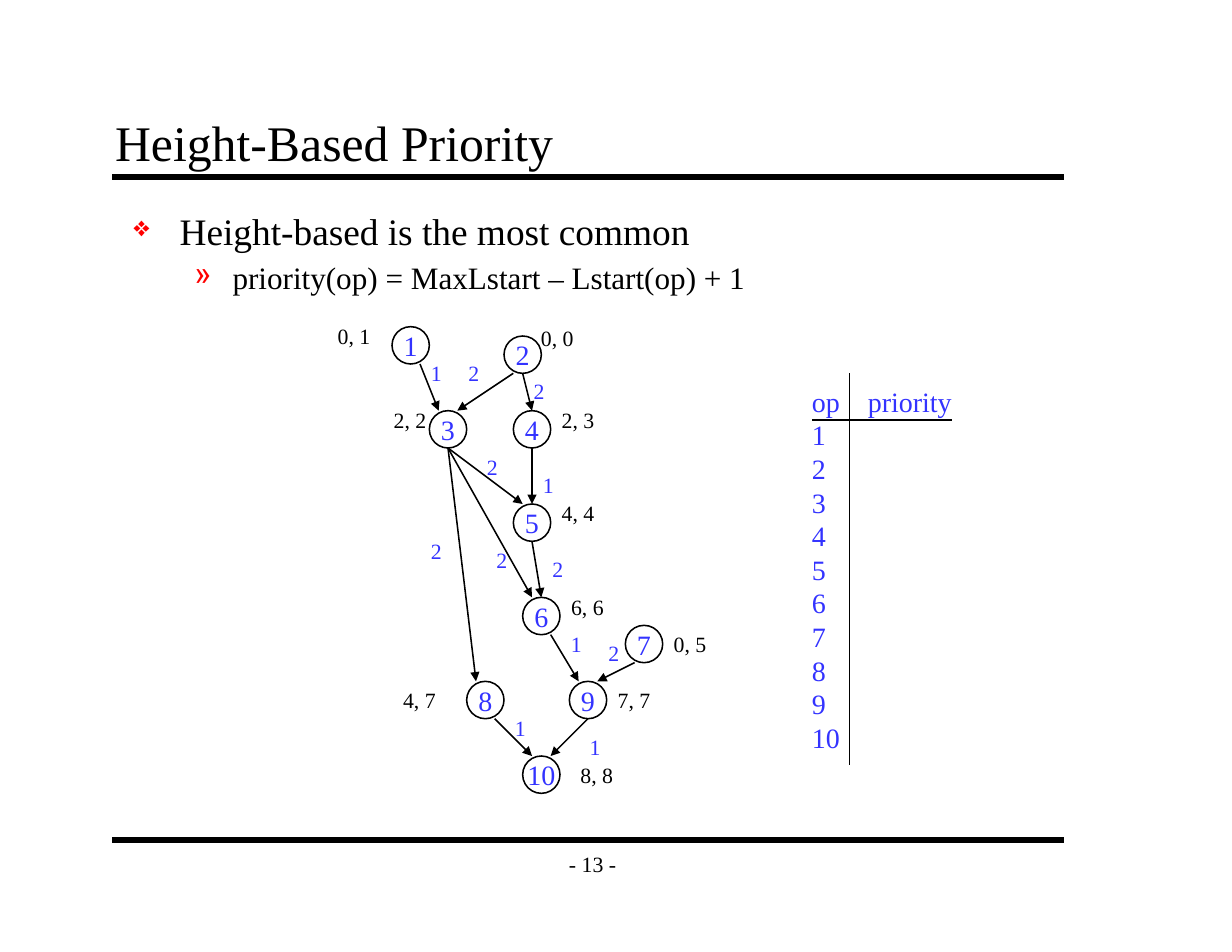
from lxml import etree
from pptx import Presentation
from pptx.dml.color import RGBColor
from pptx.enum import shapes, text
from pptx.oxml import ns
from pptx.util import Pt

BLACK = RGBColor(0x00, 0x00, 0x00)
BLUE = RGBColor(0x33, 0x33, 0xFF)
FONT = "Times New Roman"
NODE_SIZE = 24

presentation = Presentation()
presentation.slide_width, presentation.slide_height = Pt(792), Pt(612)
slide = presentation.slides.add_slide(presentation.slide_layouts[6])


def add_text(lines, left, top, width, height, size, color=BLACK, inset=(7.2, 3.6)):
    box = slide.shapes.add_textbox(Pt(left), Pt(top), Pt(width), Pt(height))
    frame = box.text_frame
    frame.word_wrap = False
    frame.margin_left = frame.margin_right = Pt(inset[0])
    frame.margin_top = frame.margin_bottom = Pt(inset[1])
    frame.text = "\n".join(lines)
    for paragraph in frame.paragraphs:
        paragraph.font.name = FONT
        paragraph.font.size = Pt(size)
        paragraph.font.color.rgb = color
    return frame


def add_line(start, end, width=1, arrow=False):
    line = slide.shapes.add_connector(
        shapes.MSO_CONNECTOR.STRAIGHT, *(Pt(value) for value in (*start, *end)))
    line.line.color.rgb = BLACK
    line.line.width = Pt(width)
    if arrow:
        etree.SubElement(line.line._get_or_add_ln(), ns.qn("a:tailEnd"), type="triangle")
    etree.SubElement(line._element.spPr, ns.qn("a:effectLst"))


# Rules, page number and title
for y in (114, 540):
    add_line((72, y), (684, y), width=4)

page_number = add_text(["- 13 -"], 354, 540, 54, 30, 14, inset=(8, 4))
page_number.vertical_anchor = text.MSO_ANCHOR.MIDDLE
page_number.paragraphs[0].alignment = text.PP_ALIGN.CENTER

title = add_text(["Height-Based Priority"], 66, 66, 612, 48, 32, inset=(8, 4))
title.word_wrap = True
title.vertical_anchor = text.MSO_ANCHOR.BOTTOM

# Bulleted text: bullet, bullet size in percent, text size, margin, indent
body = add_text(
    ["Height-based is the most common", "priority(op) = MaxLstart – Lstart(op) + 1"],
    78, 129.6, 606, 410, 24, inset=(8, 4))
body.word_wrap = True
bullets = [("❖", 75, 24, 29.5, -29.5), ("»", 100, 20, 63.5, -24.5)]
for level, (bullet, percent, size, margin, indent) in enumerate(bullets):
    paragraph = body.paragraphs[level]
    paragraph.level = level
    paragraph.font.size = Pt(size)
    paragraph.space_before = Pt(size * 0.2)
    properties = paragraph._p.get_or_add_pPr()
    properties.set("marL", str(Pt(margin)))
    properties.set("indent", str(Pt(indent)))
    default_run = properties.find(ns.qn("a:defRPr"))
    bullet_color = etree.Element(ns.qn("a:buClr"))
    etree.SubElement(bullet_color, ns.qn("a:srgbClr"), val="FF0000")
    default_run.addprevious(bullet_color)
    default_run.addprevious(etree.Element(ns.qn("a:buSzPct"), val=str(percent * 1000)))
    default_run.addprevious(etree.Element(ns.qn("a:buChar"), char=bullet))

# Operations: node position, start times, label position
nodes = {
    1: (252, 210, "0, 1", 210, 204),
    2: (324, 216, "0, 0", 340.6, 205),
    3: (276, 264, "2, 2", 246, 258),
    4: (330, 264, "2, 3", 354, 258),
    5: (330, 324, "4, 4", 354, 317.5),
    6: (336, 384, "6, 6", 360, 378),
    7: (402, 402, "0, 5", 426, 402),
    8: (300, 438, "4, 7", 252, 438),
    9: (366, 438, "7, 7", 390, 438),
    10: (336, 486, "8, 8", 366, 486),
}
for op, (x, y, times, label_x, label_y) in nodes.items():
    node = slide.shapes.add_shape(
        shapes.MSO_SHAPE.OVAL, Pt(x), Pt(y), Pt(NODE_SIZE), Pt(NODE_SIZE))
    node.shadow.inherit = False
    node.fill.background()
    node.line.color.rgb = BLACK
    node.line.width = Pt(1)
    frame = node.text_frame
    frame.word_wrap = False
    frame.vertical_anchor = text.MSO_ANCHOR.MIDDLE
    paragraph = frame.paragraphs[0]
    paragraph.text = str(op)
    paragraph.alignment = text.PP_ALIGN.CENTER
    paragraph.font.name = FONT
    paragraph.font.size = Pt(18)
    paragraph.font.color.rgb = BLUE
    add_text([times], label_x, label_y, 35.3, 24, 14)

# Dependences: source, offset along its bottom, target, offset along its top,
# latency, label position
edges = [
    (1, 18, 3, 6, 1, 270, 227.5),
    (2, 6, 3, 18, 2, 294, 227.5),
    (2, 12, 4, 12, 2, 336, 239.5),
    (3, 12, 5, 6, 2, 306, 288),
    (4, 12, 5, 12, 1, 342, 299.5),
    (3, 12, 6, 6, 2, 312, 348),
    (5, 12, 6, 12, 2, 348, 354),
    (3, 12, 8, 6, 2, 270, 342),
    (6, 18, 9, 6, 1, 360, 402),
    (7, 6, 9, 18, 2, 384, 407.5),
    (8, 18, 10, 6, 1, 324, 456),
    (9, 12, 10, 18, 1, 372, 468),
]
for source, start_offset, target, end_offset, latency, label_x, label_y in edges:
    source_x, source_y = nodes[source][:2]
    target_x, target_y = nodes[target][:2]
    add_line((source_x + start_offset, source_y + NODE_SIZE),
             (target_x + end_offset, target_y), arrow=True)
    add_text([str(latency)], label_x, label_y, 21.5, 24, 14, BLUE)

# Priority list to fill in
priorities = add_text(["op\tpriority", *map(str, nodes)], 514.8, 243.5, 104.4, 245, 18, BLUE)
for paragraph in priorities.paragraphs:
    properties = paragraph._p.get_or_add_pPr()
    properties.set("marL", str(Pt(36)))
    properties.set("indent", str(Pt(-36)))
add_line((546, 240), (546, 492))
add_line((522, 270), (612, 270))

presentation.save("out.pptx")
